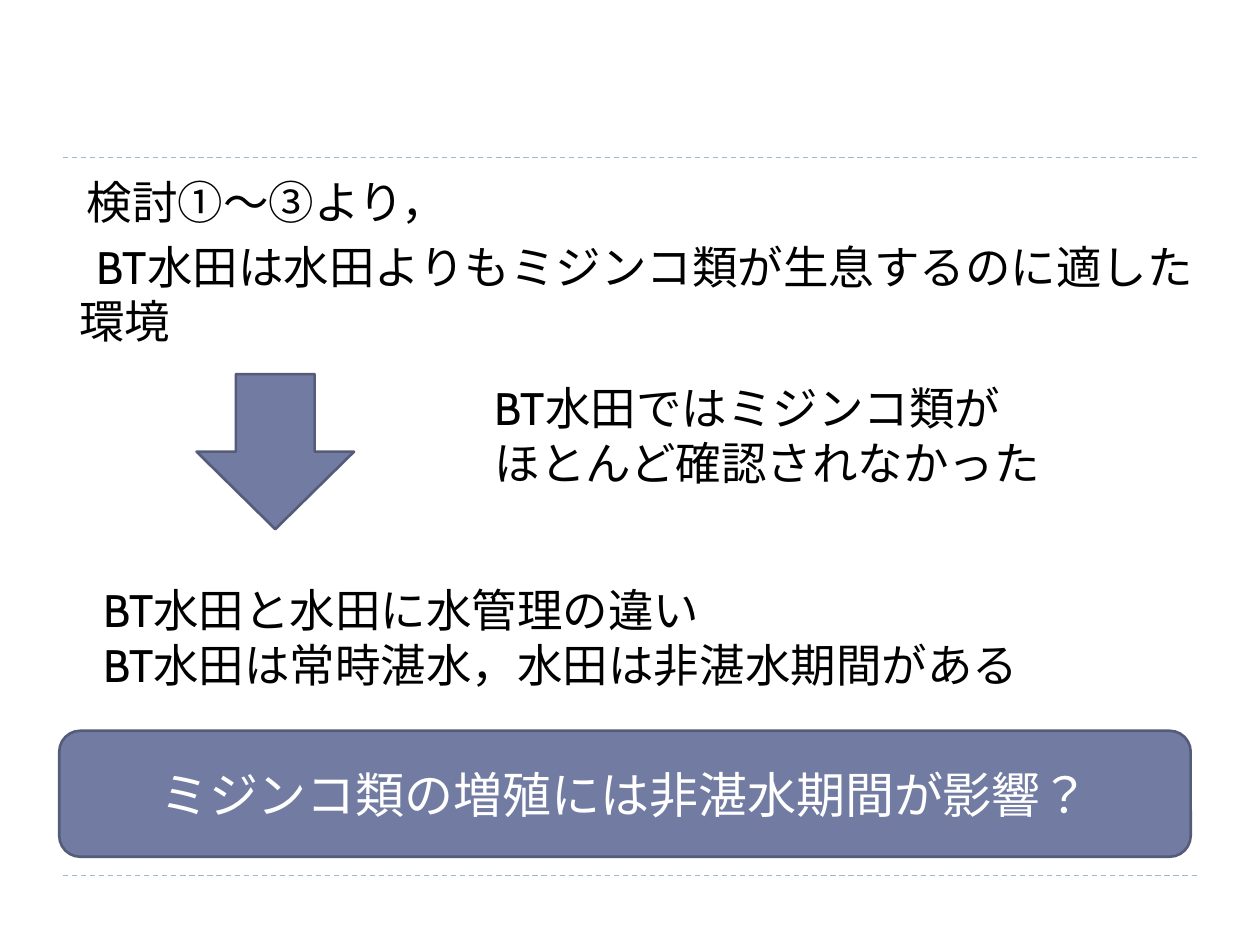
from pptx import Presentation
from pptx.dml.color import RGBColor
from pptx.enum.dml import MSO_LINE
from pptx.enum.lang import MSO_LANGUAGE_ID
from pptx.enum.shapes import MSO_CONNECTOR, MSO_SHAPE
from pptx.enum.text import MSO_ANCHOR, PP_ALIGN
from pptx.oxml.ns import qn
from pptx.util import Inches, Pt

STRAIGHT = MSO_CONNECTOR.STRAIGHT
ARROW = MSO_SHAPE.DOWN_ARROW
ROUND = MSO_SHAPE.ROUNDED_RECTANGLE
DASH = MSO_LINE.DASH
MIDDLE = MSO_ANCHOR.MIDDLE
CENTER = PP_ALIGN.CENTER
JAPANESE = MSO_LANGUAGE_ID.JAPANESE


def color(code):
    return RGBColor.from_string(code)


class Deck:
    font = "Cabin"
    size = 26
    ink = "000000"
    fill = "727CA3"
    edge = "545C79"
    rule_ink = "9FB8CD"

    def __init__(self, slide):
        self.slide = slide

    def add_run(self, para, text, size, ink):
        run = para.add_run()
        run.text = text
        run.font.name = self.font
        run.font.size = Pt(size)
        run.font.color.rgb = color(ink)
        run.font.language_id = JAPANESE

    def rule(self, y):
        line = self.slide.shapes.add_connector(
            STRAIGHT, Inches(0.5), Inches(y), Inches(9.5), Inches(y))
        line.line.color.rgb = color(self.rule_ink)
        line.line.width = Pt(0.75)
        line.line.dash_style = DASH
        props = line._element.spPr
        props.append(props.makeelement(qn("a:effectLst"), {}))

    def text(self, box, lines, gap=0, margin=0, starts=None):
        """Add one paragraph a line; starts holds first-line indents."""
        frame = self.slide.shapes.add_textbox(*map(Inches, box)).text_frame
        frame.word_wrap = True
        for i, line in enumerate(lines):
            para = frame.paragraphs[0] if i == 0 else frame.add_paragraph()
            if i:
                para.space_before = Pt(gap)
            if starts:
                props = para._p.get_or_add_pPr()
                props.set("marL", str(Inches(margin)))
                props.set("indent", str(Inches(starts[i])))
            self.add_run(para, line, self.size, self.ink)

    def shape(self, kind, box):
        shape = self.slide.shapes.add_shape(kind, *map(Inches, box))
        shape.shadow.inherit = False
        shape.fill.solid()
        shape.fill.fore_color.rgb = color(self.fill)
        shape.line.color.rgb = color(self.edge)
        shape.line.width = Pt(1.5)
        return shape

    def banner(self, box, text):
        frame = self.shape(ROUND, box).text_frame
        frame.word_wrap = True
        frame.vertical_anchor = MIDDLE
        para = frame.paragraphs[0]
        para.alignment = CENTER
        self.add_run(para, text, 28, "FFFFFF")


def main():
    show = Presentation()
    show.slide_width, show.slide_height = Inches(10), Inches(7.5)
    deck = Deck(show.slides.add_slide(show.slide_layouts[6]))

    for y in (1.25, 6.95):
        deck.rule(y)
    deck.text((0.23, 1.33, 9.69, 1.4),
              ["検討①～③より，",
               "BT水田は水田よりもミジンコ類が生息するのに適した環境"],
              gap=6, margin=0.3, starts=(0.06, 0.14))
    deck.banner((0.47, 5.8, 8.98, 1),
                "ミジンコ類の増殖には非湛水期間が影響？")
    deck.text((0.72, 4.57, 8.11, 0.98),
              ["BT水田と水田に水管理の違い",
               "BT水田は常時湛水，水田は非湛水期間がある"])
    deck.shape(ARROW, (1.56, 2.97, 1.25, 1.23))
    deck.text((3.83, 2.97, 4.84, 0.98),
              ["BT水田ではミジンコ類が", "ほとんど確認されなかった"])
    show.save("out.pptx")


if __name__ == "__main__":
    main()
